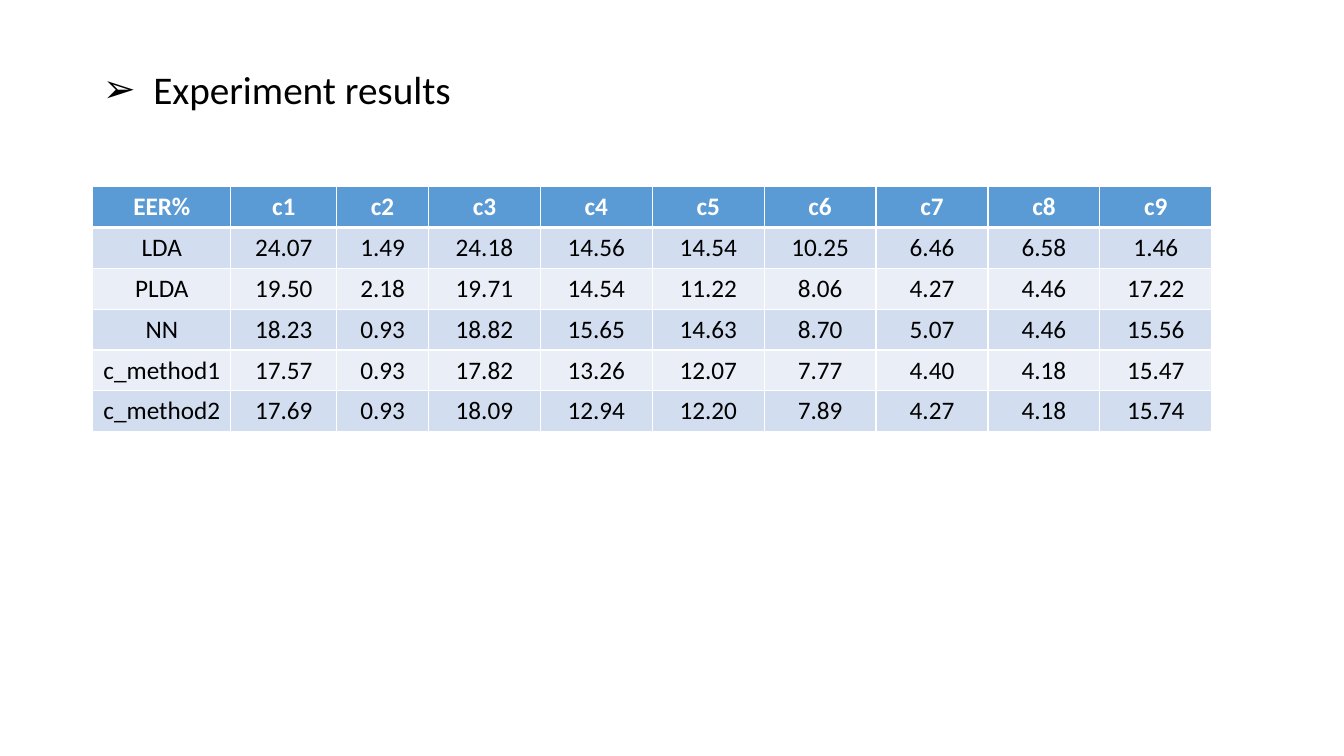
from pptx import Presentation
from pptx.dml.color import RGBColor
from pptx.enum.text import MSO_ANCHOR, PP_ALIGN
from pptx.oxml.ns import qn
from pptx.util import Inches, Pt
from lxml.etree import SubElement

FONT = "Calibri"
BLACK = RGBColor(0x00, 0x00, 0x00)
WHITE = RGBColor(0xFF, 0xFF, 0xFF)
HEADER_BLUE = RGBColor(0x5B, 0x9B, 0xD5)
BANDS = (RGBColor(0xEA, 0xEF, 0xF7), RGBColor(0xD2, 0xDE, 0xEF))

# Grid, in inches
SLIDE_WIDTH, SLIDE_HEIGHT = 13.33, 7.5
MARGIN = 0.92
TITLE_TOP, TITLE_WIDTH, TITLE_HEIGHT = 0.4, 11.5, 1.45
TABLE_TOP = TITLE_TOP + TITLE_HEIGHT
ROW_HEIGHT = 0.405
COLUMN_WIDTHS = [1.37, 1.05, 0.91] + [1.11] * 7

# Border weights, in points
THIN, THICK = 1, 3

ERROR_RATES = [
    ("EER%", "c1", "c2", "c3", "c4", "c5", "c6", "c7", "c8", "c9"),
    ("LDA", "24.07", "1.49", "24.18", "14.56", "14.54", "10.25", "6.46", "6.58", "1.46"),
    ("PLDA", "19.50", "2.18", "19.71", "14.54", "11.22", "8.06", "4.27", "4.46", "17.22"),
    ("NN", "18.23", "0.93", "18.82", "15.65", "14.63", "8.70", "5.07", "4.46", "15.56"),
    ("c_method1", "17.57", "0.93", "17.82", "13.26", "12.07", "7.77", "4.40", "4.18", "15.47"),
    ("c_method2", "17.69", "0.93", "18.09", "12.94", "12.20", "7.89", "4.27", "4.18", "15.74"),
]


def set_attributes(target, values):
    for attribute, value in values.items():
        setattr(target, attribute, value)


def format_font(font, size, color, bold=False):
    set_attributes(font, {"name": FONT, "size": Pt(size), "bold": bold})
    font.color.rgb = color


def add_bullet(paragraph, symbol, indent):
    properties = paragraph._p.get_or_add_pPr()
    properties.set("marL", str(Inches(indent)))
    properties.set("indent", str(-Inches(indent)))
    SubElement(properties, qn("a:buFont"), typeface=FONT)
    SubElement(properties, qn("a:buChar"), char=symbol)


def fill_title(title, text):
    set_attributes(title, {
        "left": Inches(MARGIN), "top": Inches(TITLE_TOP),
        "width": Inches(TITLE_WIDTH), "height": Inches(TITLE_HEIGHT),
    })
    # The deep bottom inset lifts the line above the middle of the box
    set_attributes(title.text_frame, {
        "text": text, "word_wrap": True,
        "vertical_anchor": MSO_ANCHOR.MIDDLE, "margin_bottom": Inches(0.48),
    })
    heading = title.text_frame.paragraphs[0]
    set_attributes(heading, {"alignment": PP_ALIGN.LEFT, "line_spacing": 0.9})
    add_bullet(heading, "➢", 0.5)
    format_font(heading.runs[0].font, 28, BLACK)


def add_borders(cell, weights):
    properties = cell._tc.get_or_add_tcPr()
    for side, weight in weights.items():
        border = SubElement(properties, qn(f"a:ln{side}"), w=str(Pt(weight)))
        color = SubElement(border, qn("a:solidFill"))
        SubElement(color, qn("a:srgbClr"), val=str(WHITE))


def fill_cell(cell, text, row):
    is_header = row == 0
    add_borders(cell, {
        "L": THIN, "R": THIN,
        "T": THICK if row == 1 else THIN,
        "B": THICK if is_header else THIN,
    })
    cell.fill.solid()
    cell.fill.fore_color.rgb = HEADER_BLUE if is_header else BANDS[row % 2]
    cell.text = text
    paragraph = cell.text_frame.paragraphs[0]
    paragraph.alignment = PP_ALIGN.CENTER
    format_font(paragraph.runs[0].font, 18, WHITE if is_header else BLACK, is_header)


def add_results_table(slide, rates):
    results = slide.shapes.add_table(
        len(rates), len(COLUMN_WIDTHS), Inches(MARGIN), Inches(TABLE_TOP),
        Inches(sum(COLUMN_WIDTHS)), Inches(ROW_HEIGHT * len(rates)),
    ).table
    for column, width in zip(results.columns, COLUMN_WIDTHS):
        column.width = Inches(width)
    for row, values in enumerate(rates):
        results.rows[row].height = Inches(ROW_HEIGHT)
        for column, value in enumerate(values):
            fill_cell(results.cell(row, column), value, row)


def main():
    deck = Presentation()
    set_attributes(deck, {
        "slide_width": Inches(SLIDE_WIDTH), "slide_height": Inches(SLIDE_HEIGHT),
    })
    slide = deck.slides.add_slide(deck.slide_layouts[5])

    # Heading
    fill_title(slide.shapes.title, "Experiment results")

    # Equal error rates by method and condition
    add_results_table(slide, ERROR_RATES)

    deck.save("out.pptx")


if __name__ == "__main__":
    main()
